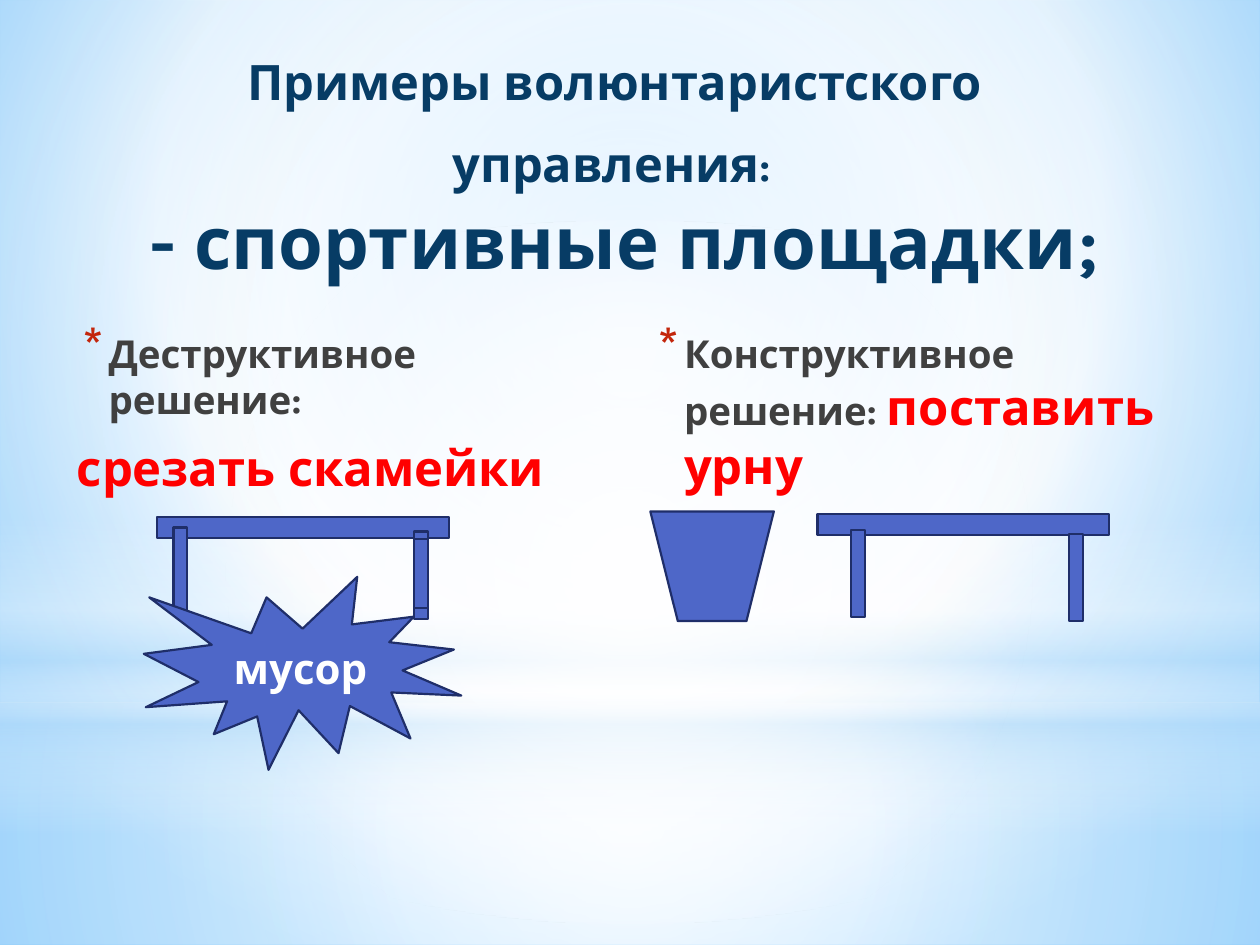
from lxml import etree
from pptx import Presentation
from pptx.dml.color import RGBColor
from pptx.enum.shapes import MSO_SHAPE
from pptx.enum.text import MSO_ANCHOR, PP_ALIGN
from pptx.oxml import parse_xml
from pptx.oxml.ns import nsdecls, qn
from pptx.util import Cm, Pt

NAVY = RGBColor(0x07, 0x3C, 0x65)
GREY = RGBColor(0x40, 0x40, 0x40)
RED = RGBColor(0xFF, 0x00, 0x00)
BLUE = RGBColor(0x4E, 0x67, 0xC8)
DARK_BLUE = RGBColor(0x1F, 0x2E, 0x69)
WHITE = RGBColor(0xFF, 0xFF, 0xFF)
SKY = RGBColor(0x9E, 0xD5, 0xFF)
DEEP_SKY = RGBColor(0x5B, 0xB9, 0xFF)
PALE = RGBColor(0xB4, 0xDC, 0xFA)
FONT = "Karla"


def paint_gradient(element, stops, focus=None):
    solid = next(element.iter(qn("a:solidFill")))
    stop_xml = "".join(
        f'<a:gs pos="{pos * 1000}"><a:srgbClr val="{color}">'
        f'<a:alpha val="{opacity * 1000}"/></a:srgbClr></a:gs>'
        for pos, color, opacity in stops)
    if focus:
        left, top, right, bottom = (side * 1000 for side in focus)
        direction = (f'<a:path path="circle"><a:fillToRect l="{left}" t="{top}" '
                     f'r="{right}" b="{bottom}"/></a:path>')
    else:
        direction = '<a:lin ang="5400000" scaled="0"/>'
    gradient = parse_xml(f'<a:gradFill {nsdecls("a")} rotWithShape="1">'
                         f'<a:gsLst>{stop_xml}</a:gsLst>{direction}</a:gradFill>')
    solid.getparent().replace(solid, gradient)


def style_run(run, size, color):
    run.font.name = FONT
    run.font.size = Pt(size)
    run.font.bold = True
    run.font.color.rgb = color


prs = Presentation()
prs.slide_width, prs.slide_height = Cm(25.4), Cm(19.05)
slide = prs.slides.add_slide(prs.slide_layouts[5])
slide.background.fill.solid()
paint_gradient(slide.element, [(0, SKY, 100), (60, WHITE, 100), (100, DEEP_SKY, 100)],
               (20, 10, 20, 60))

CENTRE = (50, 50, 50, 50)
glows = [
    (MSO_SHAPE.RECTANGLE, 14.17, 4.88, CENTRE,
     [(0, WHITE, 91), (37, WHITE, 76), (100, PALE, 79)]),
    (MSO_SHAPE.RECTANGLE, 0, 14.17, CENTRE,
     [(0, WHITE, 89), (48, WHITE, 62), (100, PALE, 79)]),
    (MSO_SHAPE.RECTANGLE, 10.46, 6.35, None,
     [(0, WHITE, 0), (29, WHITE, 30), (45, PALE, 40),
      (55, WHITE, 26), (65, PALE, 60), (100, WHITE, 0)]),
    (MSO_SHAPE.OVAL, 4.45, 14.17, CENTRE, [(0, WHITE, 100), (56, WHITE, 0)]),
]
for kind, top, height, focus, stops in glows:
    glow = slide.shapes.add_shape(kind, 0, Cm(top), prs.slide_width, Cm(height))
    glow.shadow.inherit = False
    glow.fill.solid()
    paint_gradient(glow.element.spPr, stops, focus)
    glow.line.fill.background()

heading = slide.shapes.title
slide.shapes.element.append(heading.element)
heading.left, heading.top, heading.width, heading.height = Cm(0), Cm(0.91), Cm(24.79), Cm(4.39)
heading.text_frame.vertical_anchor = MSO_ANCHOR.TOP
heading.text_frame.word_wrap = True
heading_line = heading.text_frame.paragraphs[0]
heading_line.text = "Примеры волюнтаристского\v управления"
heading_line.alignment = PP_ALIGN.CENTER
for run in heading_line.runs:
    style_run(run, 27.9, NAVY)
colon = heading_line.add_run()
colon.text = ":"
style_run(colon, 24.3, NAVY)
spacer = heading_line.add_run()
spacer.text = " "
style_run(spacer, 41.4, NAVY)
heading_line.add_line_break()
example = heading_line.add_run()
example.text = " - спортивные площадки;"
style_run(example, 41.4, NAVY)

solutions = [
    (1.3, 10.8, [[("Деструктивное решение:", 22, GREY)],
                 [("срезать скамейки", 28, RED)]]),
    (12.9, 11.81, [[("Конструктивное решение: ", 22, GREY),
                    ("поставить урну", 28, RED)]]),
]
for left, width, paragraphs in solutions:
    solution = slide.shapes.add_textbox(Cm(left), Cm(6.53), Cm(width), Cm(7.06)).text_frame
    solution.word_wrap = True
    for index, parts in enumerate(paragraphs):
        paragraph = solution.paragraphs[0] if index == 0 else solution.add_paragraph()
        for text, size, color in parts:
            run = paragraph.add_run()
            run.text = text
            style_run(run, size, color)
        paragraph.space_after = Pt(3)
        properties = paragraph._p.get_or_add_pPr()
        before = parse_xml(f'<a:spcBef {nsdecls("a")}><a:spcPct val="20000"/></a:spcBef>')
        properties.insert(0, before)
        if index == 0:
            properties.set("marL", str(Cm(0.64)))
            properties.set("indent", str(Cm(-0.51)))
            bullet_color = etree.SubElement(properties, qn("a:buClr"))
            etree.SubElement(bullet_color, qn("a:srgbClr"), val="C3260C")
            etree.SubElement(properties, qn("a:buSzPct"), val="130000")
            etree.SubElement(properties, qn("a:buChar"), char="*")

SEAT, LEG = (8, 1.8), (2.39, 1.19)
drawing = [
    (MSO_SHAPE.MATH_MINUS, 2.11, 9.73, SEAT, 0),
    (MSO_SHAPE.MATH_MINUS, 2.44, 10.92, LEG, 90),
    (MSO_SHAPE.MATH_MINUS, 7.29, 11, LEG, 90),
    (MSO_SHAPE.TRAPEZOID, 13.11, 10.31, (2.49, 2.21), 180),
    (MSO_SHAPE.MATH_MINUS, 15.42, 9.68, SEAT, 0),
    (MSO_SHAPE.MATH_MINUS, 16.1, 10.97, LEG, 90),
    (MSO_SHAPE.MATH_MINUS, 7.54, 10.97, (1.9, 1.19), 90),
    (MSO_SHAPE.MATH_MINUS, 20.5, 11.05, LEG, 90),
    (MSO_SHAPE.EXPLOSION1, 2.9, 11.63, (6.4, 3.89), 0),
]
for kind, left, top, (width, height), rotation in drawing:
    part = slide.shapes.add_shape(kind, Cm(left), Cm(top), Cm(width), Cm(height))
    part.rotation = rotation
    part.shadow.inherit = False
    part.fill.solid()
    part.fill.fore_color.rgb = BLUE
    part.line.color.rgb = DARK_BLUE
    part.line.width = Pt(1.25)
    if kind == MSO_SHAPE.EXPLOSION1:
        part.text_frame.text = "мусор"
        part.text_frame.vertical_anchor = MSO_ANCHOR.MIDDLE
        litter = part.text_frame.paragraphs[0]
        litter.alignment = PP_ALIGN.CENTER
        style_run(litter.runs[0], 24, WHITE)

prs.save("out.pptx")
